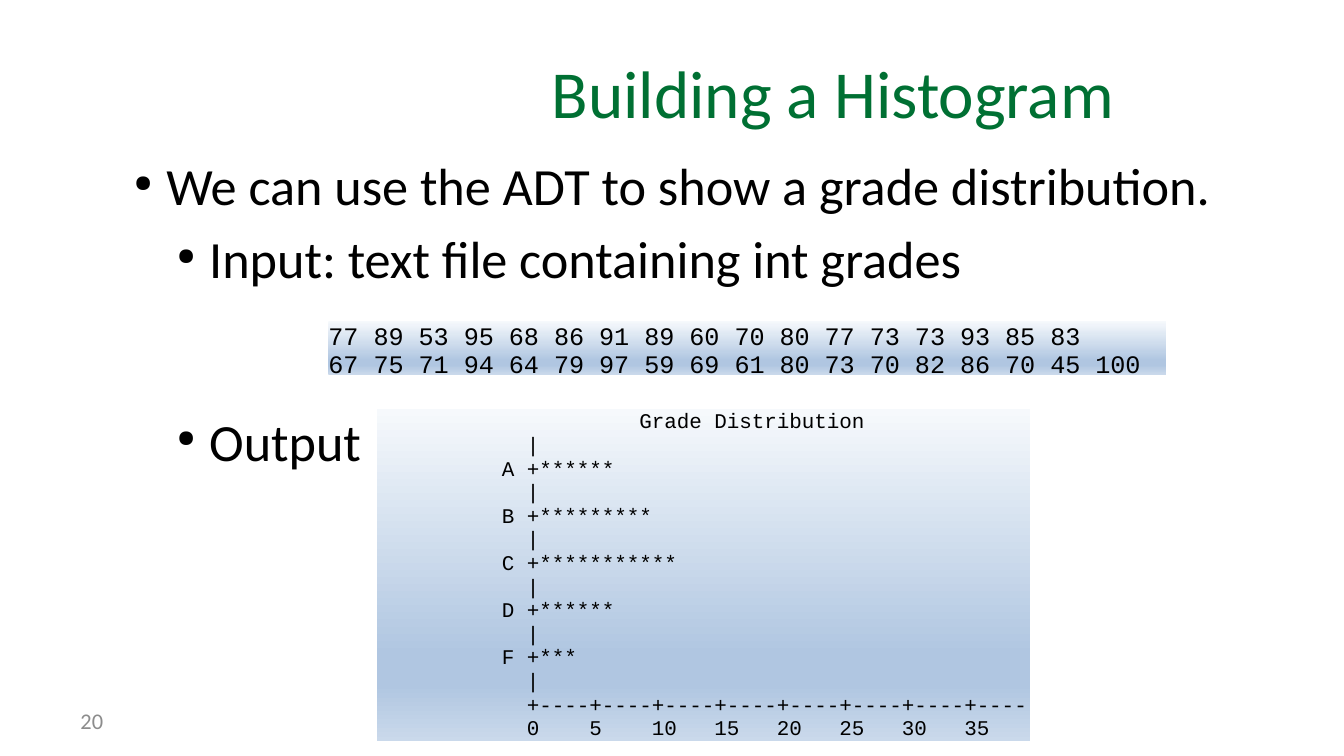
"""Build the slide that shows a grade histogram with its input and output."""
from copy import deepcopy

from lxml import etree
from pptx import Presentation
from pptx import util as u
from pptx.dml.color import RGBColor
from pptx.enum import shapes, text
from pptx.oxml.ns import qn

GREEN = RGBColor(0x00, 0x70, 0x33)
BLACK = RGBColor(0x00, 0x00, 0x00)
GREY = RGBColor(0x8C, 0x8C, 0x8C)
PALE = RGBColor(0xF6, 0xF9, 0xFC)
BLUE = RGBColor(0xB0, 0xC6, 0xE1)
LIGHT_BLUE = RGBColor(0xCA, 0xD9, 0xEB)
SHADES = [(0, PALE), (0.74, BLUE), (0.83, BLUE), (1, LIGHT_BLUE)]

GRADES = [
    "77 89 53 95 68 86 91 89 60 70 80 77 73 73 93 85 83",
    "67 75 71 94 64 79 97 59 69 61 80 73 70 82 86 70 45 100",
]
COUNTS = {"A": 6, "B": 9, "C": 11, "D": 6, "F": 3}
POINTS = [
    ("We can use the ADT to show a grade distribution.", 23, {}),
    ("Input: text file containing int grades", 46,
     {"space_before": u.Pt(5.6), "space_after": u.Pt(58.5)}),
    ("Output", 46, {"space_before": u.Pt(5.6)}),
]


def apply(target, values):
    """Set each named attribute of the target."""
    for name, value in values.items():
        setattr(target, name, value)


def write(frame, lines, font, layout):
    """Fill a text frame with one paragraph per line and return the paragraphs."""
    paragraphs = []
    for number, line in enumerate(lines):
        paragraph = frame.add_paragraph() if number else frame.paragraphs[0]
        run = paragraph.add_run()
        run.text = line
        apply(run.font, {key: value for key, value in font.items() if key != "color"})
        run.font.color.rgb = font["color"]
        apply(paragraph, layout)
        paragraphs.append(paragraph)
    return paragraphs


def add_text(slide, area, lines, size, color, layout, **frame_format):
    """Add a wrapped text box and return its paragraphs."""
    frame = slide.shapes.add_textbox(*map(u.Pt, area)).text_frame
    apply(frame, {"word_wrap": True, **frame_format})
    font = {"name": "Calibri", "size": u.Pt(size), "color": color}
    return write(frame, lines, font, layout)


def add_bullet(paragraph, indent):
    """Give a paragraph a small round bullet with a hanging indent."""
    properties = paragraph._p.get_or_add_pPr()
    properties.set("marL", str(u.Pt(indent)))
    properties.set("indent", str(u.Pt(-17.3)))
    etree.SubElement(properties, qn("a:buSzPct"), val="45000")
    etree.SubElement(properties, qn("a:buChar"), char="●")


def add_points(slide):
    """Add the bulleted points."""
    lines = [point for point, _, _ in POINTS]
    paragraphs = add_text(slide, (59, 78.5, 625, 267), lines, 28, BLACK, {})
    for paragraph, (_, indent, spacing) in zip(paragraphs, POINTS):
        add_bullet(paragraph, indent)
        apply(paragraph, spacing)


def shade(panel):
    """Fill a panel with the vertical blue gradient."""
    panel.fill.gradient()
    panel.fill.gradient_angle = 270
    stops = panel._element.spPr.find(qn("a:gradFill")).find(qn("a:gsLst"))
    while len(stops) < len(SHADES):
        stops.append(deepcopy(stops[0]))
    for stop, (position, color) in zip(panel.fill.gradient_stops, SHADES):
        stop.position = position
        stop.color.rgb = color


def add_listing(slide, area, lines, size):
    """Add a shaded panel of monospaced lines."""
    panel = slide.shapes.add_shape(shapes.MSO_SHAPE.RECTANGLE, *map(u.Pt, area))
    panel.shadow.inherit = False
    panel.line.fill.background()
    shade(panel)
    apply(panel.text_frame, {
        "word_wrap": False, "vertical_anchor": text.MSO_ANCHOR.TOP,
        "margin_left": 0, "margin_right": 0, "margin_bottom": 0,
        "margin_top": u.Pt(0.7),
    })
    font = {"name": "Courier New", "size": u.Pt(size), "color": BLACK}
    layout = {"alignment": text.PP_ALIGN.LEFT, "line_spacing": 0.94}
    write(panel.text_frame, lines, font, layout)


def histogram_lines():
    """Return the printed histogram, one string per line."""
    margin = " " * 12
    lines = [" " * 21 + "Grade Distribution", margin + "|"]
    for grade, count in COUNTS.items():
        lines += [f"{grade:>11} +" + "*" * count, margin + "|"]
    scale = "".join(f"{mark:<5}" for mark in range(0, 40, 5))
    return lines + [margin + "+----" * 8, margin + scale.rstrip()]


def main():
    """Build and save the slide."""
    deck = Presentation()
    apply(deck, {"slide_width": u.Pt(720), "slide_height": u.Pt(405)})
    slide = deck.slides.add_slide(deck.slide_layouts[6])
    middle = text.MSO_ANCHOR.MIDDLE
    add_text(slide, (36, 375, 168, 21.6), ["20"], 12, GREY, {}, vertical_anchor=middle)
    add_text(slide, (116.6, 15.8, 487.4, 67.7), ["Building a Histogram"], 36, GREEN,
             {"alignment": text.PP_ALIGN.RIGHT}, vertical_anchor=middle,
             margin_top=u.Pt(2.2))
    add_points(slide)
    add_listing(slide, (176, 172, 448.6, 28.6), GRADES, 13.5)
    add_listing(slide, (202, 219, 350, 178), histogram_lines(), 11.2)
    deck.save("out.pptx")


if __name__ == "__main__":
    main()
